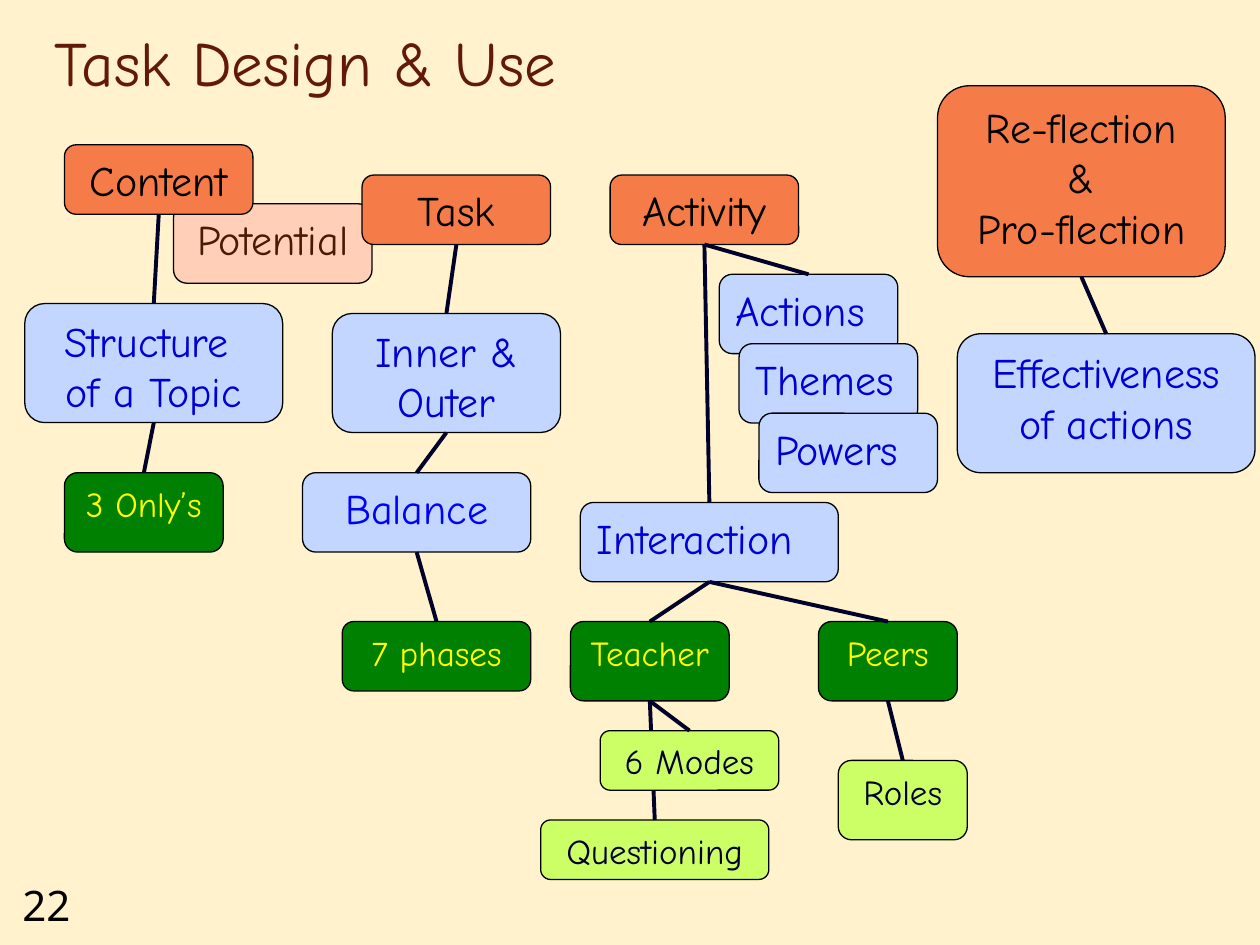
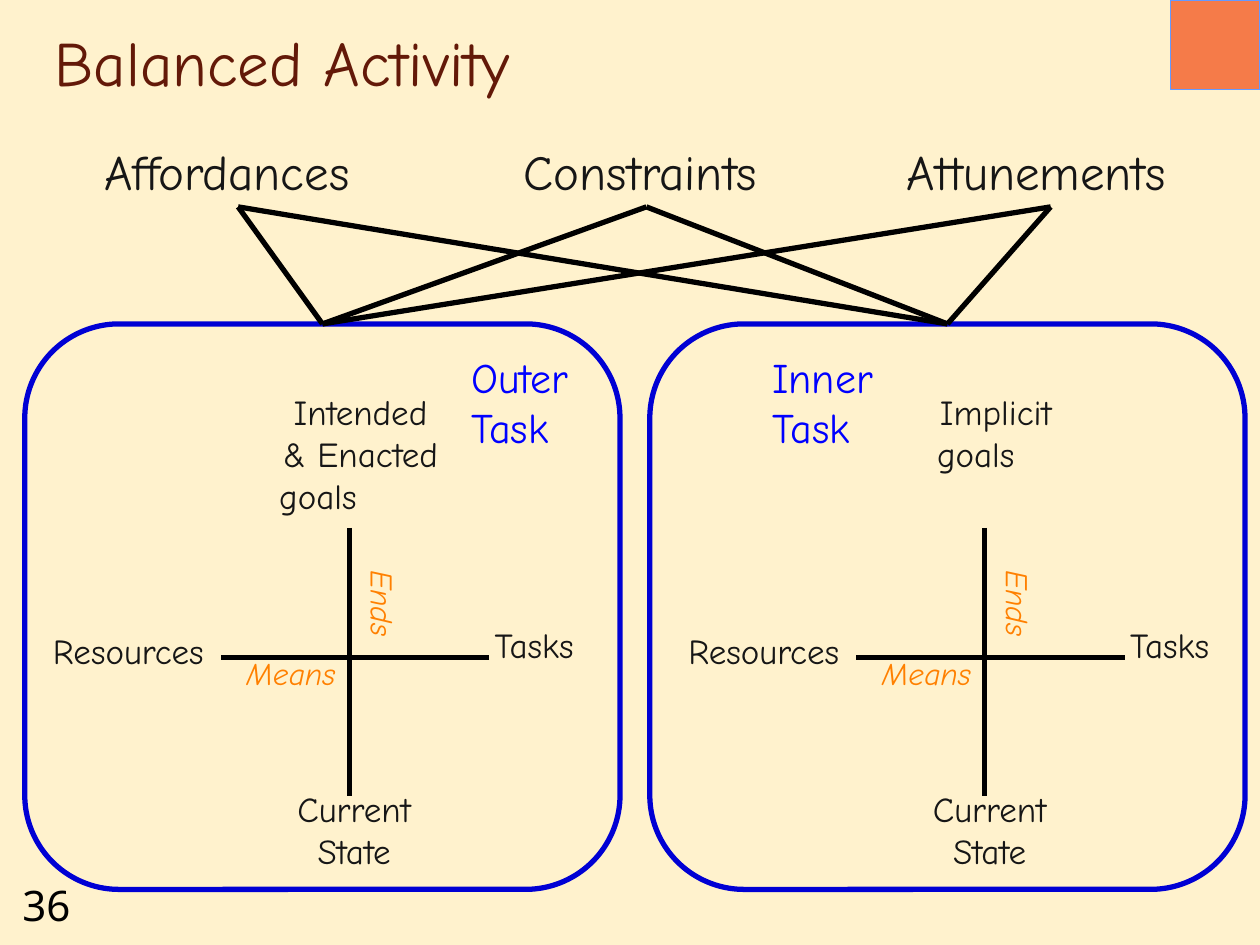
from lxml import etree
from pptx import Presentation
from pptx.dml.color import RGBColor
from pptx.enum.shapes import MSO_CONNECTOR, MSO_SHAPE
from pptx.enum.text import MSO_ANCHOR, PP_ALIGN
from pptx.oxml.ns import qn
from pptx.util import Cm, Pt

LEFT, CENTER = PP_ALIGN.LEFT, PP_ALIGN.CENTER
TOP, BOTTOM = MSO_ANCHOR.TOP, MSO_ANCHOR.BOTTOM
STRAIGHT = MSO_CONNECTOR.STRAIGHT
ROUNDED = MSO_SHAPE.ROUNDED_RECTANGLE
BUTTON = MSO_SHAPE.ACTION_BUTTON_CUSTOM
TOP_SITE, BOTTOM_SITE = 0, 2

FONT, NUMBER_FONT = "Comic Neue", "Noto Sans"
BACKGROUND, TITLE_COLOR = "FFF2CD", "631908"
BLACK, NAVY, INK = "000000", "00002A", "161616"
BLUE, DEEP_BLUE, ORANGE, CORAL = "0000FF", "0000D4", "FF8000", "F57B49"

BOX_STYLES = {
    "stage": (CORAL, BLACK, 24, CENTER),
    "potential": ("FFCFB8", "4C1A00", 24, CENTER),
    "aspect": ("C2D6FF", DEEP_BLUE, 24, CENTER),
    "balance": ("C2D6FF", BLUE, 24, CENTER),
    "listed": ("C2D6FF", DEEP_BLUE, 24, LEFT),
    "count": ("008000", "FFFF00", 20, CENTER),
    "detail": ("CCFF66", NAVY, 20, CENTER),
}
REFLECTION = "Re-flection\v&\vPro-flection"
STRUCTURE = "Structure \vof a Topic"
TASK_BOXES = [
    ("Potential", "potential", None, (3.5, 4.11, 4, 1.6)),
    ("Content", "stage", None, (1.3, 2.92, 3.8, 1.4)),
    ("Task", "stage", None, (7.3, 3.53, 3.8, 1.4)),
    ("Activity", "stage", None, (12.3, 3.53, 3.8, 1.4)),
    (REFLECTION, "stage", None, (18.9, 1.73, 5.8, 3.85)),
    (STRUCTURE, "aspect", "Content", (0.5, 6.12, 5.2, 2.4)),
    ("3 Only’s", "count", STRUCTURE, (1.3, 9.53, 3.2, 1.6)),
    ("Inner & Outer", "aspect", "Task", (6.7, 6.32, 4.6, 2.4)),
    ("Balance", "balance", "Inner & Outer", (6.1, 9.53, 4.6, 1.6)),
    ("7 phases", "count", "Balance", (6.9, 12.53, 3.8, 1.4)),
    ("Interaction", "listed", "Activity", (11.7, 10.13, 5.2, 1.6)),
    ("Actions", "listed", "Activity", (14.5, 5.53, 3.6, 1.6)),
    ("Themes", "listed", None, (14.9, 6.93, 3.6, 1.6)),
    ("Powers", "listed", None, (15.3, 8.33, 3.6, 1.6)),
    ("Teacher", "count", "Interaction", (11.5, 12.53, 3.2, 1.6)),
    ("Peers", "count", "Interaction", (16.5, 12.53, 2.8, 1.6)),
    ("Questioning", "detail", "Teacher", (10.9, 16.53, 4.6, 1.2)),
    ("6 Modes", "detail", "Teacher", (12.1, 14.73, 3.6, 1.2)),
    ("Roles", "detail", "Peers", (16.9, 15.33, 2.6, 1.6)),
    ("Effectiveness of actions", "aspect", REFLECTION, (19.3, 6.73, 6, 2.8)),
]

CONDITIONS = [
    ("Affordances", (1.85, 2.72, 5.9, 1.45), 4.8),
    ("Constraints", (10.31, 2.72, 5.46, 1.45), 13.03),
    ("Attunements", (18.03, 2.72, 6.25, 1.45), 21.18),
]
CONDITION_FOOT = 4.17
PANEL_LEFTS = [0.5, 13.1]
PANEL_TOP, PANEL_WIDTH, PANEL_HEIGHT = 6.53, 12, 11.4
CROSS_STEP = 12.81
CROSS_LINES = [((7.04, 10.64), (7.04, 16.05)), ((9.86, 13.26), (4.45, 13.26))]
CROSS_LABELS = [
    ("Current\vState", (5.64, 15.75, 3, 1.96)),
    ("Resources", (0.71, 12.57, 3.76, 1.12)),
    ("Tasks", (9.65, 12.45, 2.24, 1.12)),
]
ENDS_AREA = (6.96, 11.25, 1.27, 1.78)
MEANS_AREA = (4.72, 13.06, 2.54, 1.02)
TASK_NAMES = [
    ("Outer\vTask", (9.25, 6.96, 2.77, 2.31)),
    ("Inner\vTask", (15.32, 6.96, 2.64, 2.31)),
]
GOALS = [
    ("Intended\v& Enacted\ngoals", (5.38, 7.75, 3.78, 2.82)),
    ("Implicit\ngoals", (18.64, 7.75, 2.87, 1.96)),
]


def rgb(color):
    return RGBColor.from_string(color)


def place(shape, area):
    shape.left, shape.top, shape.width, shape.height = map(Cm, area)


def write(shape, text, size, color, alignment=LEFT, font=FONT, italic=False):
    shape.text_frame.text = text
    for paragraph in shape.text_frame.paragraphs:
        paragraph.alignment = alignment
        paragraph.font.name = font
        paragraph.font.size = Pt(size)
        paragraph.font.color.rgb = rgb(color)
        paragraph.font.italic = italic


def add_label(slide, text, area, size, color, alignment=LEFT, **style):
    label = slide.shapes.add_textbox(*map(Cm, area))
    label.text_frame.word_wrap = False
    write(label, text, size, color, alignment, **style)
    return label


def add_outlined(slide, kind, area, fill, line_color, line_width):
    shape = slide.shapes.add_shape(kind, *map(Cm, area))
    shape.shadow.inherit = False
    if fill:
        shape.fill.solid()
        shape.fill.fore_color.rgb = rgb(fill)
    else:
        shape.fill.background()
    shape.line.color.rgb = rgb(line_color)
    shape.line.width = Pt(line_width)
    return shape


def add_line(slide, start, end, color, width):
    line = slide.shapes.add_connector(STRAIGHT, *map(Cm, (*start, *end)))
    line.line.color.rgb = rgb(color)
    line.line.width = Pt(width)
    etree.SubElement(line.element.spPr, qn("a:effectLst"))
    return line


def add_titled_slide(presentation, title_text, number):
    slide = presentation.slides.add_slide(presentation.slide_layouts[5])
    title = slide.shapes.title
    place(title, (0.85, 0.42, 21.6, 1.7))
    title.text_frame.vertical_anchor = BOTTOM
    write(title, title_text, 36, TITLE_COLOR)
    add_label(slide, number, (0.2, 17.6, 1.9, 1.27), 24, BLACK, font=NUMBER_FONT)
    return slide


def build_task_design(presentation):
    slide = add_titled_slide(presentation, "Task Design & Use", "22")
    boxes = {}
    for text, style, parent, area in TASK_BOXES:
        fill, color, size, alignment = BOX_STYLES[style]
        box = add_outlined(slide, ROUNDED, area, fill, BLACK, 0.75)
        box.text_frame.vertical_anchor = TOP
        box.text_frame.word_wrap = True
        write(box, text, size, color, alignment)
        boxes[text] = box
        if parent:
            branch = add_line(slide, (0, 0), (0, 0), NAVY, 2.25)
            branch.begin_connect(boxes[parent], BOTTOM_SITE)
            branch.end_connect(box, TOP_SITE)


def add_cross(slide, shift):
    def shifted(area):
        return (area[0] + shift, *area[1:])

    for start, end in CROSS_LINES:
        add_line(slide, shifted(start), shifted(end), BLACK, 3)
    for text, area in CROSS_LABELS:
        add_label(slide, text, shifted(area), 20, INK, CENTER)
    ends = add_label(slide, "Ends", shifted(ENDS_AREA), 18, ORANGE, italic=True)
    ends.element.txBody.bodyPr.set("vert", "vert")
    add_label(slide, "Means", shifted(MEANS_AREA), 18, ORANGE, italic=True)


def build_balanced_activity(presentation):
    slide = add_titled_slide(presentation, "Balanced Activity", "36")
    for index, panel_left in enumerate(PANEL_LEFTS):
        add_cross(slide, index * CROSS_STEP)
        panel_area = (panel_left, PANEL_TOP, PANEL_WIDTH, PANEL_HEIGHT)
        add_outlined(slide, ROUNDED, panel_area, None, DEEP_BLUE, 3)
    for text, area in TASK_NAMES:
        add_label(slide, text, area, 24, BLUE)
    for text, area in GOALS:
        goal = add_label(slide, text, area, 20, INK)
        goal.text_frame.paragraphs[0].alignment = CENTER
    for text, area, foot in CONDITIONS:
        add_label(slide, text, area, 28, INK)
        for panel_left in PANEL_LEFTS:
            panel_middle = panel_left + PANEL_WIDTH / 2
            add_line(slide, (panel_middle, PANEL_TOP), (foot, CONDITION_FOOT), BLACK, 3)
    add_outlined(slide, BUTTON, (23.6, 0, 1.8, 1.8), CORAL, "6699FF", 0.75)


def main():
    presentation = Presentation()
    presentation.slide_width, presentation.slide_height = Cm(25.4), Cm(19.05)
    background = presentation.slide_master.background.fill
    background.solid()
    background.fore_color.rgb = rgb(BACKGROUND)
    build_task_design(presentation)
    build_balanced_activity(presentation)
    presentation.save("out.pptx")


if __name__ == "__main__":
    main()
